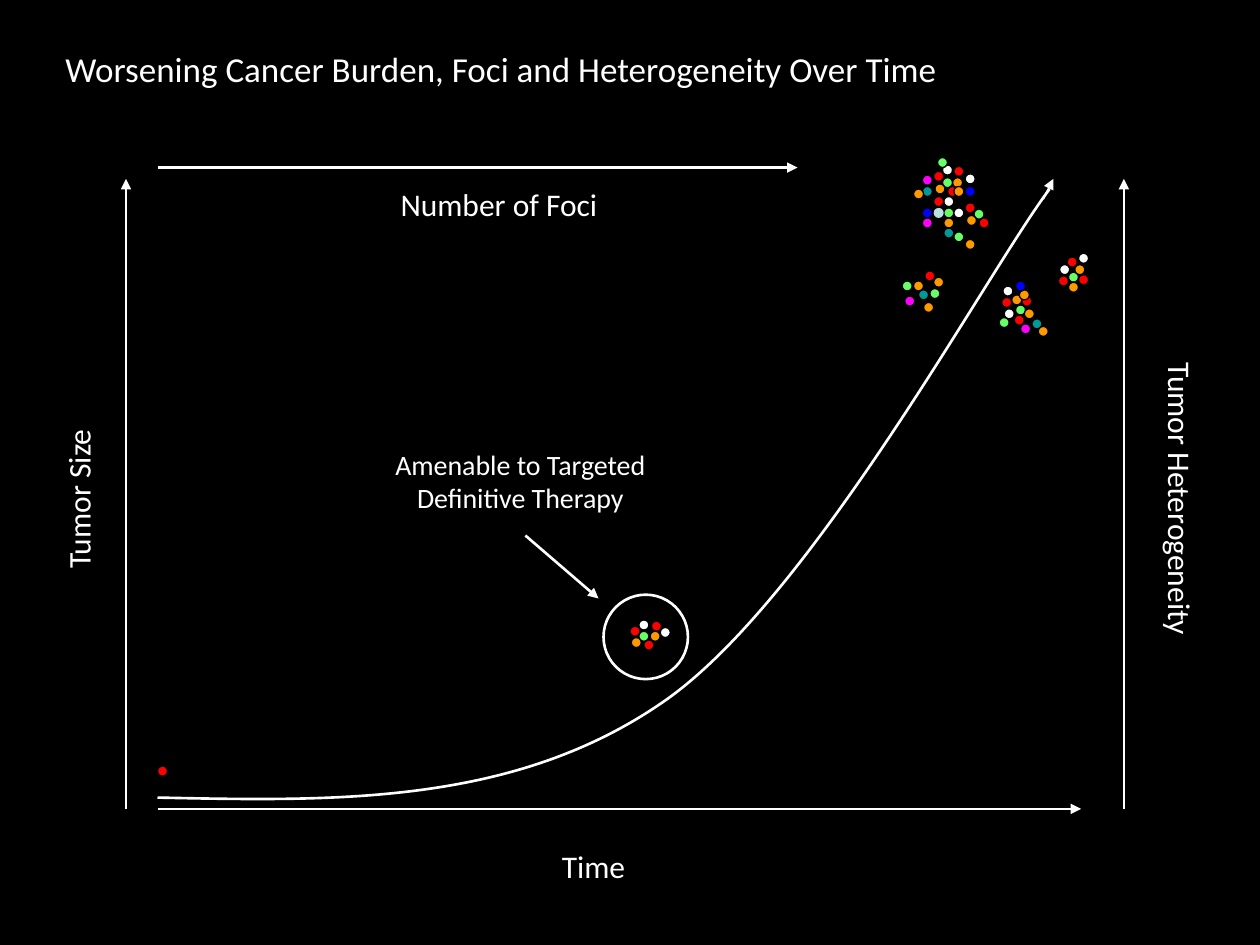
from typing import NamedTuple

from lxml.etree import SubElement
from pptx import Presentation
from pptx.dml.color import RGBColor
from pptx.enum.shapes import MSO_CONNECTOR, MSO_SHAPE
from pptx.enum.text import MSO_AUTO_SIZE, PP_ALIGN
from pptx.oxml.ns import qn
from pptx.util import Inches, Pt

COLORS = {
    "black": "000000", "white": "FFFFFF", "red": "FF0000", "green": "66FF66",
    "orange": "FF9900", "magenta": "FF00FF", "blue": "0000FF", "teal": "009999",
    "pale": "BBE0E3",
}
FONT = "Calibri"
DOT = 0.08


class Label(NamedTuple):
    text: str
    x: float
    y: float
    w: float
    h: float
    size: int = 18
    rotation: int = 0
    align: PP_ALIGN = PP_ALIGN.CENTER


class Arrow(NamedTuple):
    x1: float
    y1: float
    x2: float
    y2: float
    width: float = 1.5


class Cell(NamedTuple):
    x: float
    y: float
    color: str


class Tumor(NamedTuple):
    rotation: float
    cells: list[Cell]


LABELS = [
    Label("Worsening Cancer Burden, Foci and Heterogeneity Over Time",
          0.42, 0.33, 8.17, 0.43, size=20, align=PP_ALIGN.LEFT),
    Label("Time", 2.75, 6.67, 3.92, 0.4),
    Label("Tumor Size", -1.34, 3.76, 3.92, 0.4, rotation=270),
    Label("Tumor Heterogeneity", 7.41, 3.76, 3.92, 0.4, rotation=90),
    Label("Number of Foci", 2, 1.42, 3.92, 0.4),
    Label("Amenable to Targeted Definitive Therapy", 2.67, 3.5, 2.92, 0.64, size=16),
]

ARROWS = [
    Arrow(1.25, 6.42, 8.58, 6.42),
    Arrow(1, 6.42, 1, 1.42),
    Arrow(8.92, 6.42, 8.92, 1.42),
    Arrow(1.25, 1.33, 6.33, 1.33),
    Arrow(4.17, 4.25, 4.75, 4.75),
    Arrow(8.28, 1.58, 8.36, 1.42, width=1),
]

# Start point, then two controls and an end point for each Bezier segment
GROWTH_CURVE = [(1.25, 6.33), (2.66, 6.36), (4.07, 6.39), (5.25, 5.58),
                (6.43, 4.78), (7.82, 2.18), (8.33, 1.5)]

FIRST_CELL = Cell(1.25, 6.08, "red")

TUMORS = [
    Tumor(0, [
        Cell(5.17, 4.93, "red"), Cell(5.07, 4.92, "white"), Cell(5.07, 5.01, "green"),
        Cell(5.16, 5.01, "orange"), Cell(5.11, 5.08, "red"), Cell(5.01, 5.06, "orange"),
        Cell(5, 4.97, "red"), Cell(5.24, 4.98, "white"),
    ]),
    Tumor(0, [
        Cell(7.57, 1.32, "red"), Cell(7.48, 1.31, "white"), Cell(7.48, 1.41, "green"),
        Cell(7.56, 1.41, "orange"), Cell(7.52, 1.48, "red"), Cell(7.42, 1.46, "orange"),
        Cell(7.41, 1.36, "red"), Cell(7.32, 1.73, "magenta"), Cell(7.49, 1.56, "white"),
        Cell(7.49, 1.65, "green"), Cell(7.32, 1.65, "blue"), Cell(7.32, 1.48, "teal"),
        Cell(7.25, 1.5, "orange"), Cell(7.41, 1.65, "pale"), Cell(7.41, 1.56, "red"),
        Cell(7.66, 1.38, "white"), Cell(7.73, 1.66, "green"), Cell(7.57, 1.48, "orange"),
        Cell(7.77, 1.73, "red"), Cell(7.67, 1.71, "orange"), Cell(7.66, 1.61, "red"),
        Cell(7.49, 1.73, "orange"), Cell(7.32, 1.39, "magenta"), Cell(7.57, 1.65, "white"),
        Cell(7.57, 1.84, "green"), Cell(7.66, 1.48, "blue"), Cell(7.49, 1.81, "teal"),
        Cell(7.44, 1.25, "green"), Cell(7.66, 1.9, "orange"),
    ]),
    Tumor(309.4, [
        Cell(8.47, 2.04, "red"), Cell(8.41, 2.1, "white"), Cell(8.48, 2.16, "green"),
        Cell(8.53, 2.1, "orange"), Cell(8.56, 2.18, "red"), Cell(8.48, 2.24, "orange"),
        Cell(8.4, 2.19, "red"), Cell(8.56, 2.01, "white"),
    ]),
    Tumor(330.9, [
        Cell(7.18, 2.35, "magenta"), Cell(7.34, 2.15, "red"), Cell(7.41, 2.2, "orange"),
        Cell(7.25, 2.23, "orange"), Cell(7.38, 2.29, "green"), Cell(7.29, 2.3, "teal"),
        Cell(7.33, 2.4, "orange"), Cell(7.16, 2.23, "green"),
    ]),
    Tumor(247.3, [
        Cell(7.95, 2.36, "red"), Cell(7.97, 2.45, "white"), Cell(8.06, 2.42, "green"),
        Cell(8.03, 2.34, "orange"), Cell(8.11, 2.35, "red"), Cell(8.13, 2.45, "orange"),
        Cell(8.05, 2.5, "red"), Cell(8.19, 2.53, "teal"), Cell(8.24, 2.59, "orange"),
        Cell(7.96, 2.27, "white"), Cell(8.09, 2.3, "orange"), Cell(8.1, 2.57, "magenta"),
        Cell(8.06, 2.23, "blue"), Cell(7.93, 2.52, "green"),
    ]),
]


def rgb(name: str) -> RGBColor:
    return RGBColor.from_string(COLORS[name])


def set_line(sp, color: str, width: float) -> None:
    sp.line.color.rgb = rgb(color)
    sp.line.width = Pt(width)


def add_label(shapes, label: Label) -> None:
    sp = shapes.add_textbox(Inches(label.x), Inches(label.y), Inches(label.w), Inches(label.h))
    sp.rotation = label.rotation
    tf = sp.text_frame
    tf.word_wrap = True
    tf.auto_size = MSO_AUTO_SIZE.SHAPE_TO_FIT_TEXT
    tf.text = label.text
    p = tf.paragraphs[0]
    p.alignment = label.align
    font = p.runs[0].font
    font.name = FONT
    font.size = Pt(label.size)
    font.color.rgb = rgb("white")


def add_arrow(shapes, arrow: Arrow) -> None:
    sp = shapes.add_connector(MSO_CONNECTOR.STRAIGHT, Inches(arrow.x1), Inches(arrow.y1),
                              Inches(arrow.x2), Inches(arrow.y2))
    set_line(sp, "white", arrow.width)
    SubElement(sp.line._get_or_add_ln(), qn("a:tailEnd"), type="triangle")
    SubElement(sp._element.spPr, qn("a:effectLst"))


def add_circle(shapes, x: float, y: float, diameter: float):
    sp = shapes.add_shape(MSO_SHAPE.OVAL, Inches(x), Inches(y),
                          Inches(diameter), Inches(diameter))
    sp.shadow.inherit = False
    return sp


def add_cell(shapes, cell: Cell, rotation: float = 0) -> None:
    sp = add_circle(shapes, cell.x, cell.y, DOT)
    sp.rotation = rotation
    sp.fill.solid()
    sp.fill.fore_color.rgb = rgb(cell.color)
    if cell.color == "pale":
        sp.line.fill.background()
    else:
        set_line(sp, "black", 0.75)


def add_curve(shapes, points: list[tuple[float, float]]) -> None:
    """Draw a polyline through the points, then turn each three segments into one Bezier."""
    start, *rest = [(Inches(x), Inches(y)) for x, y in points]
    builder = shapes.build_freeform(*start)
    builder.add_line_segments(rest, close=False)
    sp = builder.convert_to_shape()
    sp.shadow.inherit = False
    sp.fill.background()
    set_line(sp, "white", 1.5)
    outline = next(sp._element.iter(qn("a:path")))
    segments = outline.findall(qn("a:lnTo"))
    for i in range(0, len(segments), 3):
        bezier = SubElement(outline, qn("a:cubicBezTo"))
        for segment in segments[i:i + 3]:
            bezier.append(segment[0])
            outline.remove(segment)


def main() -> None:
    prs = Presentation()
    prs.slide_width, prs.slide_height = Inches(10), Inches(7.5)
    s = prs.slides.add_slide(prs.slide_layouts[6])
    s.background.fill.solid()
    s.background.fill.fore_color.rgb = rgb("black")

    add_curve(s.shapes, GROWTH_CURVE)
    for arrow in ARROWS:
        add_arrow(s.shapes, arrow)
    add_cell(s.shapes, FIRST_CELL)
    for tumor in TUMORS:
        group = s.shapes.add_group_shape()
        for cell in tumor.cells:
            add_cell(group.shapes, cell, tumor.rotation)
    target = add_circle(s.shapes, 4.79, 4.72, 0.67)
    target.fill.background()
    set_line(target, "white", 1.5)
    for label in LABELS:
        add_label(s.shapes, label)

    prs.save("out.pptx")


if __name__ == "__main__":
    main()
